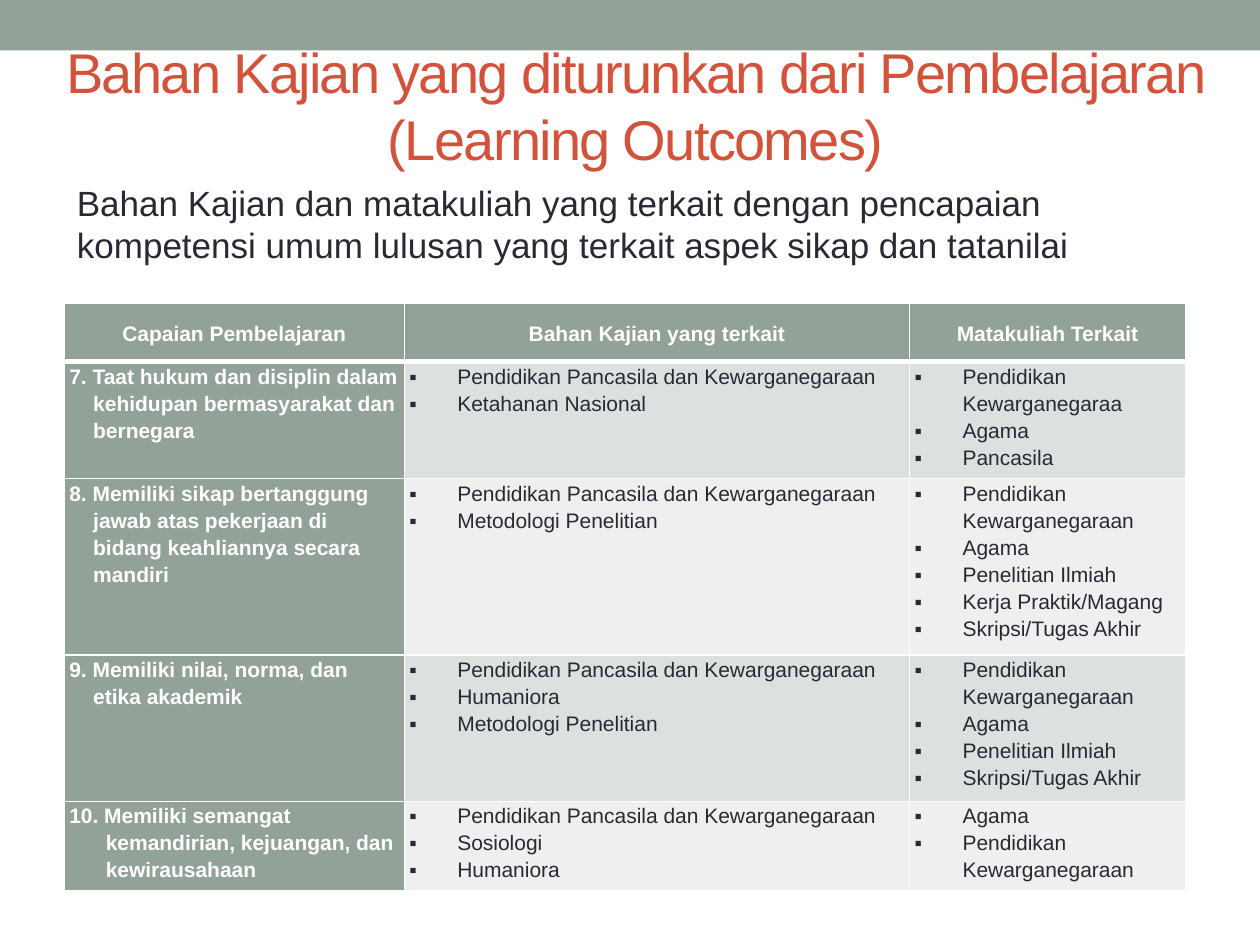
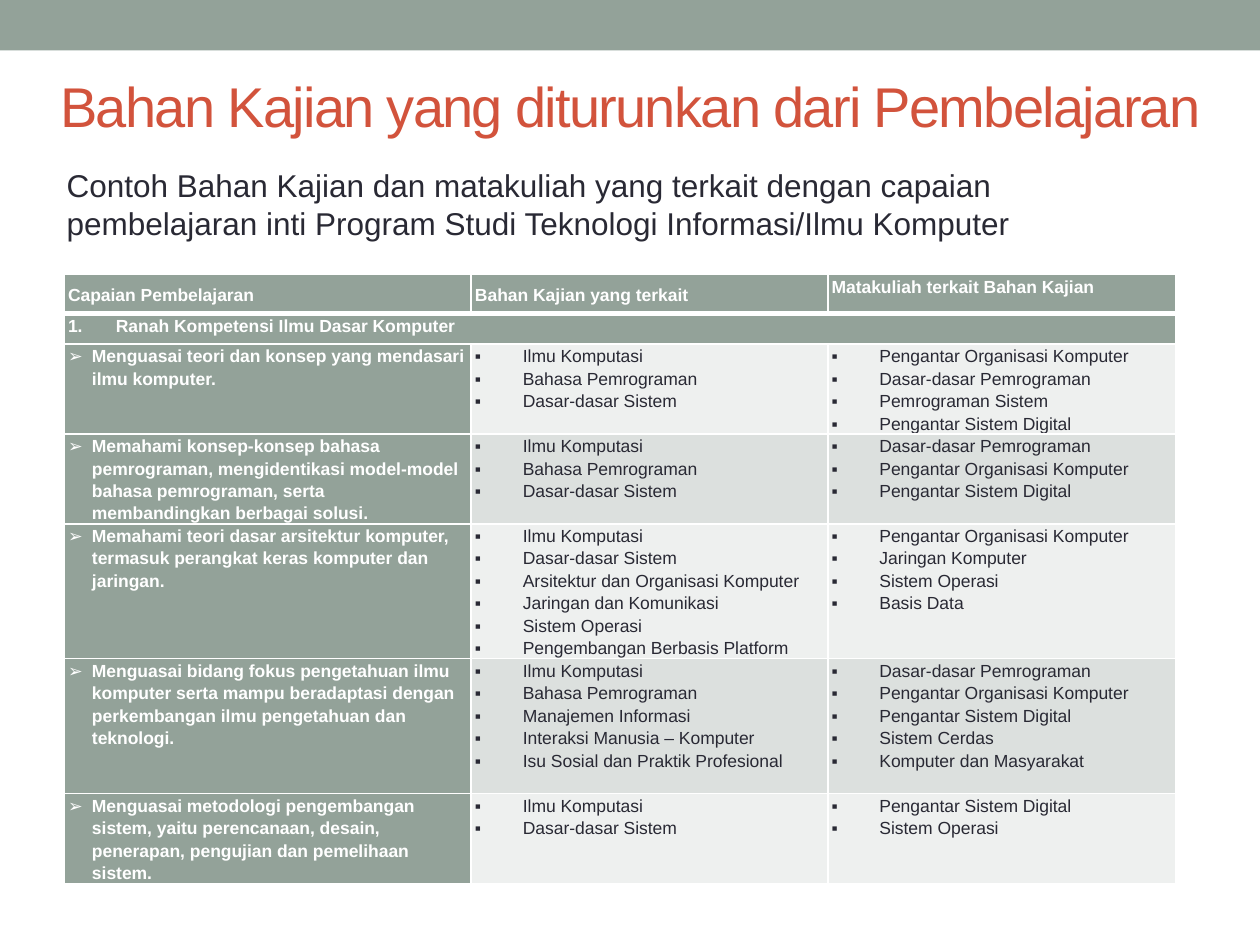
from dataclasses import dataclass

from lxml import etree
from pptx import Presentation
from pptx.dml.color import RGBColor
from pptx.enum.shapes import MSO_SHAPE
from pptx.enum.text import MSO_ANCHOR, MSO_AUTO_SIZE, PP_ALIGN
from pptx.oxml.ns import qn
from pptx.util import Inches, Pt

RECTANGLE = MSO_SHAPE.RECTANGLE
TOP, MIDDLE = MSO_ANCHOR.TOP, MSO_ANCHOR.MIDDLE
LEFT, CENTER = PP_ALIGN.LEFT, PP_ALIGN.CENTER
NO_AUTOFIT = MSO_AUTO_SIZE.NONE
TITLE_AND_BODY, TITLE_ONLY = 1, 5


@dataclass(frozen=True)
class Theme:
    font: str = "Arial"
    sage: str = "93A299"
    rust: str = "D2533C"
    ink: str = "292934"
    white: str = "FFFFFF"
    bands: tuple = ("EEF0EF", "DCE0DE")
    title_size: int = 32
    title_spacing: int = -100
    line_spacing: float = 1.15
    rule: int = 1
    header_rule: int = 3


@dataclass(frozen=True)
class TableStyle:
    box: tuple
    columns: tuple
    rows: tuple
    size: int
    inset: float
    header_align: int
    header_anchors: tuple


THEME = Theme()
TITLE = "Bahan Kajian yang diturunkan dari Pembelajaran"
SQUARE, ARROW, NUMBER = "▪", "➢", "1."
LIST_INDENT, OUTCOME_INDENT, WIDE_INDENT = 0.38, 0.19, 0.29

ATTITUDE_STYLE = TableStyle(
    (0.51, 2.41, 8.9, 4.66), (2.7, 4.01, 2.19), (0.46, 0.93, 1.4, 1.16, 0.71),
    12, 0.04, CENTER, (MIDDLE, MIDDLE, MIDDLE))
ATTITUDE_HEADER = ("Capaian Pembelajaran", "Bahan Kajian yang terkait", "Matakuliah Terkait")
CIVICS = "Pendidikan Pancasila dan Kewarganegaraan"
CITIZENSHIP = "Pendidikan Kewarganegaraan"
ATTITUDE_ROWS = (
    ("7. Taat hukum dan disiplin dalam kehidupan bermasyarakat dan bernegara",
     (CIVICS, "Ketahanan Nasional"),
     ("Pendidikan Kewarganegaraa", "Agama", "Pancasila")),
    ("8. Memiliki sikap bertanggung jawab atas pekerjaan di bidang keahliannya secara mandiri",
     (CIVICS, "Metodologi Penelitian"),
     (CITIZENSHIP, "Agama", "Penelitian Ilmiah", "Kerja Praktik/Magang", "Skripsi/Tugas Akhir")),
    ("9. Memiliki nilai, norma, dan etika akademik",
     (CIVICS, "Humaniora", "Metodologi Penelitian"),
     (CITIZENSHIP, "Agama", "Penelitian Ilmiah", "Skripsi/Tugas Akhir")),
    ("10. Memiliki semangat kemandirian, kejuangan, dan kewirausahaan",
     (CIVICS, "Sosiologi", "Humaniora"),
     ("Agama", CITIZENSHIP)),
)

CORE_STYLE = TableStyle(
    (0.51, 2.18, 8.82, 4.82), (3.23, 2.83, 2.76), (0.31, 0.24, 0.71, 0.71, 1.07, 1.07, 0.71),
    10, 0.03, LEFT, (MIDDLE, MIDDLE, TOP))
CORE_HEADER = ("Capaian Pembelajaran", "Bahan Kajian yang terkait", "Matakuliah terkait Bahan Kajian")
CORE_SECTION = "Ranah Kompetensi Ilmu Dasar Komputer"
COMPUTING, LANGUAGES, SYSTEMS = "Ilmu Komputasi", "Bahasa Pemrograman", "Dasar-dasar Sistem"
ORGANISATION, PROGRAMMING = "Pengantar Organisasi Komputer", "Dasar-dasar Pemrograman"
DIGITAL, OPERATING = "Pengantar Sistem Digital", "Sistem Operasi"
CORE_ROWS = (
    ("Menguasai teori dan konsep yang mendasari ilmu komputer.",
     (COMPUTING, LANGUAGES, SYSTEMS),
     (ORGANISATION, PROGRAMMING, "Pemrograman Sistem", DIGITAL)),
    ("Memahami konsep-konsep bahasa pemrograman, mengidentikasi model-model bahasa "
     "pemrograman, serta membandingkan berbagai solusi.",
     (COMPUTING, LANGUAGES, SYSTEMS),
     (PROGRAMMING, ORGANISATION, DIGITAL)),
    ("Memahami teori dasar arsitektur komputer, termasuk perangkat keras komputer dan jaringan.",
     (COMPUTING, SYSTEMS, "Arsitektur dan Organisasi Komputer", "Jaringan dan Komunikasi",
      OPERATING, "Pengembangan Berbasis Platform"),
     (ORGANISATION, "Jaringan Komputer", OPERATING, "Basis Data")),
    ("Menguasai bidang fokus pengetahuan ilmu komputer serta mampu beradaptasi dengan "
     "perkembangan ilmu pengetahuan dan teknologi.",
     (COMPUTING, LANGUAGES, "Manajemen Informasi", "Interaksi Manusia – Komputer",
      "Isu Sosial dan Praktik Profesional"),
     (PROGRAMMING, ORGANISATION, DIGITAL, "Sistem Cerdas", "Komputer dan Masyarakat")),
    ("Menguasai metodologi pengembangan sistem, yaitu perencanaan, desain, penerapan, "
     "pengujian dan pemelihaan sistem.",
     (COMPUTING, SYSTEMS),
     (DIGITAL, OPERATING)),
)


def color(code):
    return RGBColor.from_string(code)


def place(shape, box):
    shape.left, shape.top, shape.width, shape.height = map(Inches, box)


def format_spans(para, size, code, bold=False):
    for span in para.runs:
        span.font.name = THEME.font
        span.font.size = Pt(size)
        span.font.bold = bold
        span.font.color.rgb = color(code)


def set_indent(para, indent, bullet=None):
    props = para._p.get_or_add_pPr()
    props.set("marL", str(Inches(indent)))
    props.set("indent", str(-Inches(indent)))
    if bullet is None:
        etree.SubElement(props, qn("a:buNone"))
        return
    etree.SubElement(props, qn("a:buFont"), typeface=THEME.font)
    if bullet == NUMBER:
        etree.SubElement(props, qn("a:buAutoNum"), type="arabicPeriod")
    else:
        etree.SubElement(props, qn("a:buChar"), char=bullet)


def add_band(page):
    band = page.shapes.add_shape(RECTANGLE, 0, 0, Inches(10), Inches(0.4))
    band.shadow.inherit = False
    band.fill.solid()
    band.fill.fore_color.rgb = color(THEME.sage)
    band.line.fill.background()
    page.shapes._spTree.insert(2, band._element)


def set_title(page, text, box):
    title = page.shapes.title
    place(title, box)
    frame = title.text_frame
    frame.text = text
    frame.auto_size = NO_AUTOFIT
    frame.vertical_anchor = MIDDLE
    para = frame.paragraphs[0]
    para.alignment = CENTER
    format_spans(para, THEME.title_size, THEME.rust)
    for span in para.runs:
        span.font._element.set("spc", str(THEME.title_spacing))


def set_intro(shape, text, box, size):
    place(shape, box)
    frame = shape.text_frame
    frame.word_wrap = True
    frame.auto_size = NO_AUTOFIT
    frame.text = text
    para = frame.paragraphs[0]
    set_indent(para, 0)
    format_spans(para, size, THEME.ink)


def set_borders(cell, top, bottom):
    props = cell._tc.get_or_add_tcPr()
    sides = (("a:lnL", THEME.rule), ("a:lnR", THEME.rule), ("a:lnT", top), ("a:lnB", bottom))
    for position, (side, width) in enumerate(sides):
        line = etree.Element(qn(side), w=str(Pt(width)))
        fill = etree.SubElement(line, qn("a:solidFill"))
        etree.SubElement(fill, qn("a:srgbClr"), val=THEME.white)
        props.insert(position, line)


def fill_cell(cell, lines, style, background, indent=0, bullet=None, align=LEFT, anchor=TOP):
    cell.fill.solid()
    cell.fill.fore_color.rgb = color(background)
    cell.margin_left = cell.margin_right = Inches(style.inset)
    cell.margin_top = cell.margin_bottom = 0
    cell.vertical_anchor = anchor
    cell.text_frame.text = "\n".join(lines)
    heading = background == THEME.sage
    for para in cell.text_frame.paragraphs:
        para.alignment = align
        para.line_spacing = THEME.line_spacing
        set_indent(para, indent, bullet)
        format_spans(para, style.size, THEME.white if heading else THEME.ink, heading)


def add_outcome_table(page, style, header, outcomes, bullet=None, section=None):
    frame = page.shapes.add_table(len(style.rows), len(style.columns), *map(Inches, style.box))
    table = frame.table
    for column, width in zip(table.columns, style.columns):
        column.width = Inches(width)
    for row, height in zip(table.rows, style.rows):
        row.height = Inches(height)
    for index, (text, anchor) in enumerate(zip(header, style.header_anchors)):
        fill_cell(table.cell(0, index), [text], style, THEME.sage,
                  align=style.header_align, anchor=anchor)
    first = 1
    if section:
        table.cell(1, 0).merge(table.cell(1, len(style.columns) - 1))
        fill_cell(table.cell(1, 0), [section], style, THEME.sage, LIST_INDENT, NUMBER)
        first = 2
    for row, (outcome, *lists) in enumerate(outcomes, first):
        indent = WIDE_INDENT if outcome.startswith("10.") else OUTCOME_INDENT
        fill_cell(table.cell(row, 0), [outcome], style, THEME.sage, indent, bullet)
        for column, items in enumerate(lists, 1):
            fill_cell(table.cell(row, column), items, style, THEME.bands[row % 2],
                      LIST_INDENT, SQUARE)
    for row in range(len(style.rows)):
        for column in range(len(style.columns)):
            set_borders(table.cell(row, column),
                        THEME.header_rule if row == 1 else THEME.rule,
                        THEME.header_rule if row == 0 else THEME.rule)


def build_attitude_page(deck):
    page = deck.slides.add_slide(deck.slide_layouts[TITLE_AND_BODY])
    add_band(page)
    set_title(page, TITLE + " (Learning Outcomes)", (0.28, 0.29, 9.53, 1.08))
    set_intro(page.placeholders[1],
              "Bahan Kajian dan matakuliah yang terkait dengan pencapaian kompetensi umum "
              "lulusan yang terkait aspek sikap dan tatanilai",
              (0.51, 1.39, 9, 5.33), 20)
    add_outcome_table(page, ATTITUDE_STYLE, ATTITUDE_HEADER, ATTITUDE_ROWS)


def build_core_page(deck):
    page = deck.slides.add_slide(deck.slide_layouts[TITLE_ONLY])
    add_band(page)
    set_title(page, TITLE, (0.24, 0.44, 9.53, 0.79))
    set_intro(page.shapes.add_textbox(0, 0, 0, 0),
              "Contoh Bahan Kajian dan matakuliah yang terkait dengan capaian pembelajaran "
              "inti Program Studi Teknologi Informasi/Ilmu Komputer",
              (0.43, 1.27, 8.98, 0.71), 18)
    add_outcome_table(page, CORE_STYLE, CORE_HEADER, CORE_ROWS, ARROW, CORE_SECTION)


def main():
    deck = Presentation()
    deck.slide_width, deck.slide_height = Inches(10), Inches(7.5)
    build_attitude_page(deck)
    build_core_page(deck)
    deck.save("out.pptx")


if __name__ == "__main__":
    main()
